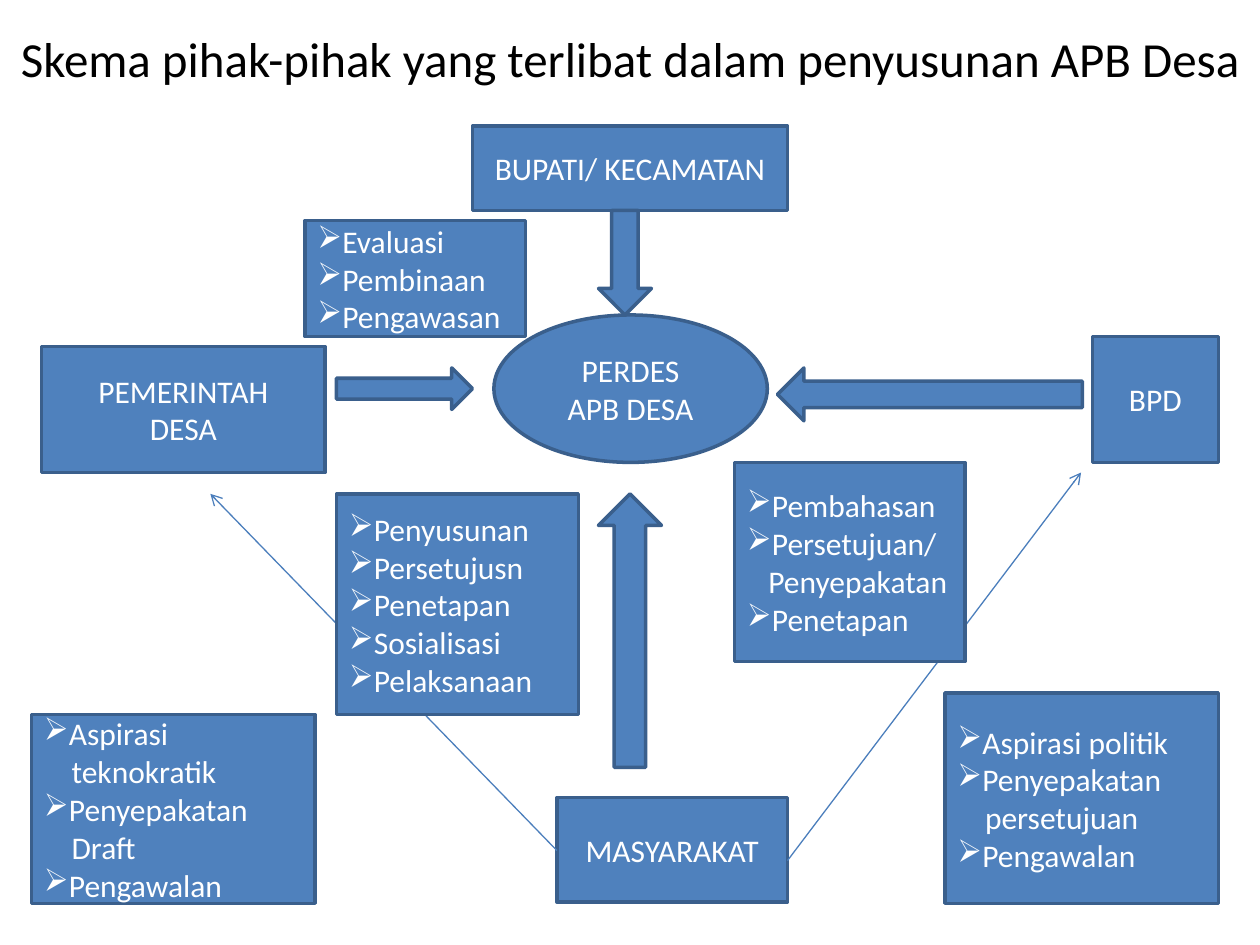
from dataclasses import dataclass

from lxml.etree import SubElement
from pptx import Presentation
from pptx.dml.color import RGBColor
from pptx.enum.shapes import MSO_CONNECTOR as Connector, MSO_SHAPE as Shape
from pptx.enum.text import MSO_ANCHOR as Anchor, PP_ALIGN as Align
from pptx.oxml.ns import qn
from pptx.util import Inches, Pt


@dataclass(frozen=True)
class Theme:
    font: str = "Calibri"
    title_size: float = 28
    body_size: float = 18
    outline_width: float = 2
    link_width: float = 0.75
    ink: RGBColor = RGBColor(0, 0, 0)
    white: RGBColor = RGBColor(255, 255, 255)
    fill: RGBColor = RGBColor(0x4F, 0x81, 0xBD)
    outline: RGBColor = RGBColor(0x3A, 0x5F, 0x8C)
    link: RGBColor = RGBColor(0x4B, 0x7E, 0xBC)


THEME = Theme()

PARTIES = [
    (Shape.RECTANGLE, (3.75, 1, 2.5, 0.67), ["BUPATI/ KECAMATAN"]),
    (Shape.OVAL, (3.92, 2.5, 2.17, 1.17), ["PERDES", "APB DESA"]),
    (Shape.RECTANGLE, (8.67, 2.67, 1, 1), ["BPD"]),
    (Shape.RECTANGLE, (4.42, 6.33, 1.83, 0.83), ["MASYARAKAT"]),
    (Shape.RECTANGLE, (0.33, 2.75, 2.25, 1), ["PEMERINTAH", "DESA"]),
]

BLOCK_ARROWS = [
    (Shape.DOWN_ARROW, (4.75, 1.67, 0.42, 0.83)),
    (Shape.UP_ARROW, (4.75, 3.92, 0.5, 2.17)),
    (Shape.LEFT_ARROW, (6.17, 2.92, 2.42, 0.42)),
    (Shape.RIGHT_ARROW, (2.67, 2.92, 1.08, 0.33)),
]

ASPIRATION_LINKS = [
    ((4.42, 6.75), (1.67, 3.92)),
    ((6.25, 6.83), (8.58, 3.75)),
]

# Each role is a tuple: a bulleted line, then any continuation lines.
ROLE_LISTS = [
    ((7.5, 5.5, 2.17, 1.67), 0.22,
     [("Aspirasi politik",), ("Penyepakatan", "persetujuan"), ("Pengawalan",)]),
    ((0.25, 5.67, 2.25, 1.5), 0.22,
     [("Aspirasi", "teknokratik"), ("Penyepakatan", "Draft"), ("Pengawalan",)]),
    ((2.42, 1.75, 1.75, 0.92), 0,
     [("Evaluasi",), ("Pembinaan",), ("Pengawasan",)]),
    ((5.83, 3.67, 1.83, 1.58), 0.17,
     [("Pembahasan",), ("Persetujuan/", "Penyepakatan"), ("Penetapan",)]),
    ((2.67, 3.92, 1.92, 1.75), 0,
     [("Penyusunan",), ("Persetujusn",), ("Penetapan",), ("Sosialisasi",),
      ("Pelaksanaan",)]),
]


def set_font(paragraph, size, color):
    settings = {"name": THEME.font, "size": Pt(size)}
    for name, value in settings.items():
        setattr(paragraph.font, name, value)
    paragraph.font.color.rgb = color


def write_lines(frame, lines, align, size=THEME.body_size, color=THEME.white):
    frame.word_wrap = True
    frame.vertical_anchor = Anchor.MIDDLE
    frame.text = "\n".join(lines)
    for paragraph in frame.paragraphs:
        paragraph.alignment = align
        set_font(paragraph, size, color)


def add_title(slide, text):
    title = slide.shapes.add_textbox(0, 0, Inches(10), Inches(0.92))
    write_lines(title.text_frame, [text], Align.CENTER, THEME.title_size, THEME.ink)


def add_block(slide, kind, place):
    block = slide.shapes.add_shape(kind, *map(Inches, place))
    block.shadow.inherit = False
    block.fill.solid()
    block.fill.fore_color.rgb = THEME.fill
    block.line.color.rgb = THEME.outline
    block.line.width = Pt(THEME.outline_width)
    return block


def add_party(slide, kind, place, lines):
    party = add_block(slide, kind, place)
    write_lines(party.text_frame, lines, Align.CENTER)


def add_link(slide, start, end):
    """Draw a thin line with an open arrowhead at its end."""
    link = slide.shapes.add_connector(
        Connector.STRAIGHT, *map(Inches, (*start, *end)))
    link.line.color.rgb = THEME.link
    link.line.width = Pt(THEME.link_width)
    SubElement(link.line._get_or_add_ln(), qn("a:tailEnd"), type="arrow")
    SubElement(link._element.spPr, qn("a:effectLst"))


def set_marker(paragraph, bulleted, indent):
    properties = paragraph._p.get_or_add_pPr()
    properties.set("marL", str(0 if bulleted else Inches(indent)))
    properties.set("indent", "0")
    if bulleted:
        SubElement(properties, qn("a:buChar"), char="➢")
    else:
        SubElement(properties, qn("a:buNone"))


def add_role_list(slide, place, indent, roles):
    frame = add_block(slide, Shape.RECTANGLE, place).text_frame
    lines = [(line, i == 0) for role in roles for i, line in enumerate(role)]
    write_lines(frame, [line for line, _ in lines], Align.LEFT)
    for paragraph, (_, bulleted) in zip(frame.paragraphs, lines):
        set_marker(paragraph, bulleted, indent)


def main():
    deck = Presentation()
    deck.slide_width, deck.slide_height = Inches(10), Inches(7.5)
    slide = deck.slides.add_slide(deck.slide_layouts[6])

    add_title(slide, "Skema pihak-pihak yang terlibat dalam penyusunan APB Desa")
    for party in PARTIES:
        add_party(slide, *party)
    for arrow in BLOCK_ARROWS:
        add_block(slide, *arrow)
    for link in ASPIRATION_LINKS:
        add_link(slide, *link)
    for role_list in ROLE_LISTS:
        add_role_list(slide, *role_list)

    deck.save("out.pptx")


if __name__ == "__main__":
    main()
